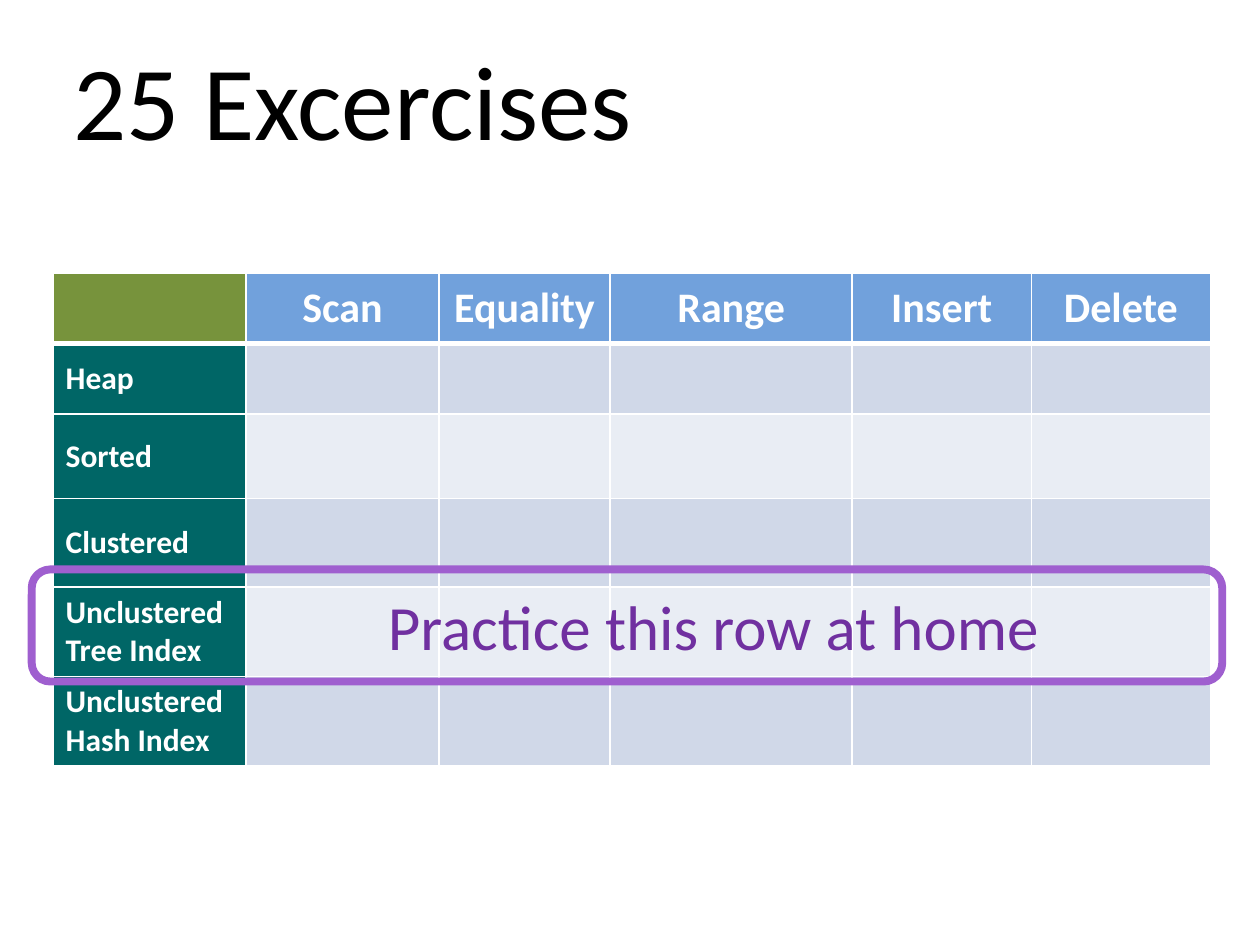
from dataclasses import dataclass

from lxml.etree import SubElement
from pptx import Presentation
from pptx.dml.color import RGBColor
from pptx.enum.shapes import MSO_SHAPE
from pptx.enum.text import MSO_ANCHOR, MSO_AUTO_SIZE, PP_ALIGN
from pptx.oxml.ns import qn
from pptx.util import Cm, Pt


@dataclass(frozen=True)
class Theme:
    font: str = "Calibri"
    black: str = "000000"
    white: str = "FFFFFF"
    corner: str = "77933C"
    header: str = "71A1DC"
    label: str = "006666"
    bands: tuple = ("D0D8E8", "E9EDF4")
    note: str = "7030A0"
    frame: str = "9F5FCF"
    title_size: int = 60
    note_size: int = 36
    header_size: int = 24
    label_size: int = 18
    frame_width: float = 4.5
    thin: int = 1
    thick: int = 3


THEME = Theme()
OPERATIONS = ["Scan", "Equality", "Range", "Insert", "Delete"]
FILES = ["Heap", "Sorted", "Clustered", "Unclustered Tree Index", "Unclustered Hash Index"]
COLUMN_WIDTHS = [3.89, 3.89, 3.45, 4.88, 3.61, 3.61]
ROW_HEIGHTS = [1.42, 1.42, 1.7, 1.78, 1.78, 1.78]


def add_span(para, text, size, color, bold=False):
    span = para.add_run()
    span.text = text
    span.font.name = THEME.font
    span.font.size = Pt(size)
    span.font.bold = bold
    span.font.color.rgb = RGBColor.from_string(color)


def add_title(page, text):
    title = page.shapes.title
    title.left, title.top, title.width, title.height = Cm(1.22), Cm(0.64), Cm(20.12), Cm(3.02)
    title.text_frame.vertical_anchor = MSO_ANCHOR.MIDDLE
    para = title.text_frame.paragraphs[0]
    para.alignment = PP_ALIGN.LEFT
    para.line_spacing = 0.9
    add_span(para, text, THEME.title_size, THEME.black)


def set_borders(cell, top, bottom):
    properties = cell._tc.get_or_add_tcPr()
    widths = {"a:lnL": THEME.thin, "a:lnR": THEME.thin, "a:lnT": top, "a:lnB": bottom}
    for tag, width in widths.items():
        line = SubElement(properties, qn(tag), w=str(Pt(width)))
        fill = SubElement(line, qn("a:solidFill"))
        SubElement(fill, qn("a:srgbClr"), val=THEME.white)


def cell_color(row, column):
    if row == 0:
        return THEME.header if column else THEME.corner
    return THEME.bands[(row - 1) % 2] if column else THEME.label


def format_cell(cell, row, column):
    set_borders(
        cell,
        top=THEME.thick if row == 1 else THEME.thin,
        bottom=THEME.thick if row == 0 else THEME.thin,
    )
    cell.fill.solid()
    cell.fill.fore_color.rgb = RGBColor.from_string(cell_color(row, column))
    cell.vertical_anchor = MSO_ANCHOR.MIDDLE


def add_exercise_table(page):
    frame = page.shapes.add_table(
        len(ROW_HEIGHTS), len(COLUMN_WIDTHS),
        Cm(1.07), Cm(5.51), Cm(sum(COLUMN_WIDTHS)), Cm(sum(ROW_HEIGHTS)),
    )
    table = frame.table
    for column, width in zip(table.columns, COLUMN_WIDTHS):
        column.width = Cm(width)
    for row, height in zip(table.rows, ROW_HEIGHTS):
        row.height = Cm(height)
    for row in range(len(ROW_HEIGHTS)):
        for column in range(len(COLUMN_WIDTHS)):
            format_cell(table.cell(row, column), row, column)
    for column, operation in enumerate(OPERATIONS, 1):
        para = table.cell(0, column).text_frame.paragraphs[0]
        para.alignment = PP_ALIGN.CENTER
        add_span(para, operation, THEME.header_size, THEME.white, bold=True)
    for row, file in enumerate(FILES, 1):
        para = table.cell(row, 0).text_frame.paragraphs[0]
        add_span(para, file, THEME.label_size, THEME.white, bold=True)


def add_note(page, text):
    box = page.shapes.add_textbox(Cm(7.57), Cm(11.71), Cm(13.77), Cm(1.8))
    box.text_frame.word_wrap = False
    box.text_frame.auto_size = MSO_AUTO_SIZE.SHAPE_TO_FIT_TEXT
    add_span(box.text_frame.paragraphs[0], text, THEME.note_size, THEME.note)


def add_row_frame(page):
    frame = page.shapes.add_shape(
        MSO_SHAPE.ROUNDED_RECTANGLE, Cm(0.64), Cm(11.48), Cm(24), Cm(2.26)
    )
    frame.shadow.inherit = False
    frame.fill.background()
    frame.line.color.rgb = RGBColor.from_string(THEME.frame)
    frame.line.width = Pt(THEME.frame_width)


def main():
    deck = Presentation()
    deck.slide_width, deck.slide_height = Cm(25.4), Cm(19.05)
    page = deck.slides.add_slide(deck.slide_layouts[5])
    add_title(page, "25 Excercises")
    add_exercise_table(page)
    add_note(page, "Practice this row at home")
    add_row_frame(page)
    deck.save("out.pptx")


if __name__ == "__main__":
    main()
